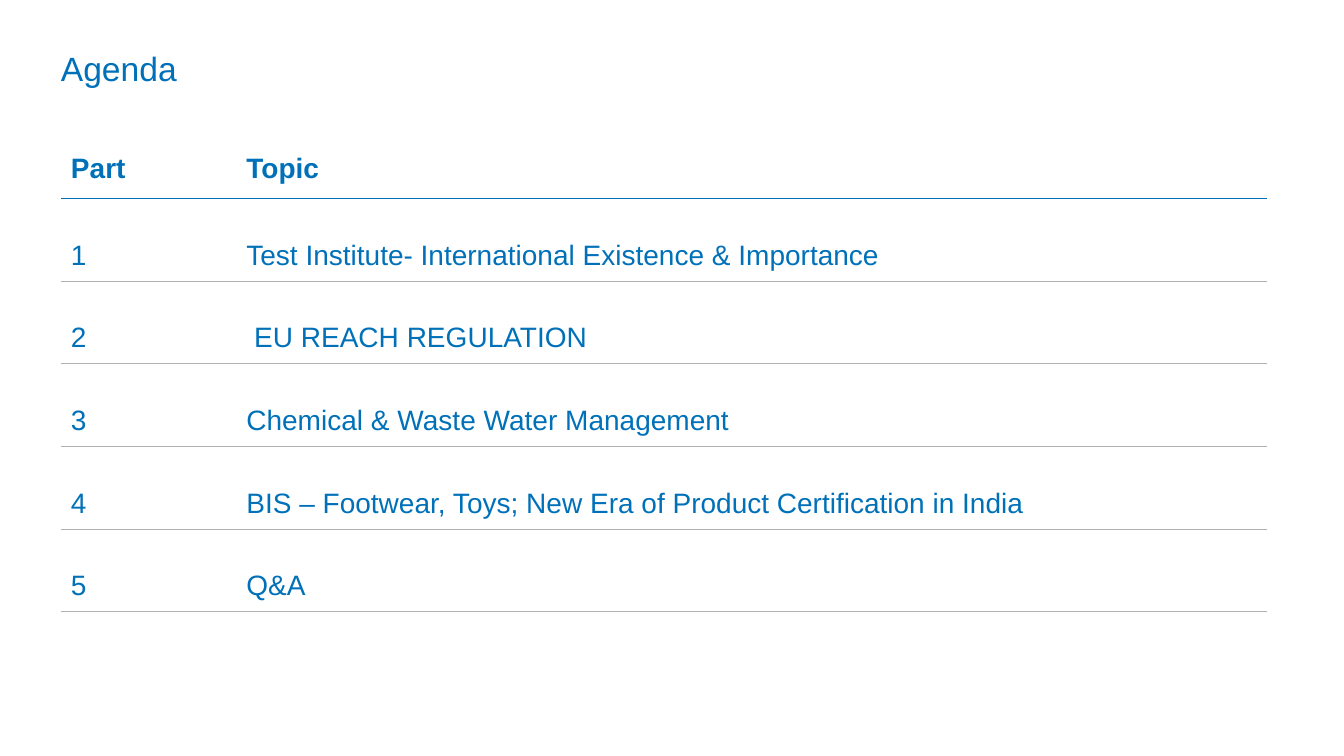
from lxml import etree
from pptx import Presentation
from pptx.dml.color import RGBColor
from pptx.enum.text import MSO_ANCHOR, PP_ALIGN
from pptx.oxml.ns import qn
from pptx.util import Pt

LEFT = PP_ALIGN.LEFT
TOP = MSO_ANCHOR.TOP
MIDDLE = MSO_ANCHOR.MIDDLE
TITLE_ONLY = 5

COLORS = {"blue": "0071B9", "gray": "B1B1B1"}
FONT = "Arial"
COLUMN_WIDTHS = (58.3, 67, 736.5)
HEADER_HEIGHT = 64.4
ROW_HEIGHT = 58.9
TOPICS = (
    "Test Institute- International Existence & Importance",
    " EU REACH REGULATION",
    "Chemical & Waste Water Management",
    "BIS – Footwear, Toys; New Era of Product Certification in India",
    "Q&A",
)


def set_values(target, values):
    """Set each named attribute of the target."""
    for name, value in values.items():
        setattr(target, name, value)


def write_text(para, text, size, bold=False):
    """Write one blue, left-aligned span into a paragraph."""
    para.alignment = LEFT
    span = para.add_run()
    span.text = text
    set_values(span.font, {"name": FONT, "size": Pt(size), "bold": bold})
    span.font.color.rgb = RGBColor.from_string(COLORS["blue"])


def add_title(page, text):
    """Place and fill the title placeholder."""
    title = page.shapes.title
    set_values(title, {"left": Pt(43.5), "top": Pt(31.7), "width": Pt(873.4), "height": Pt(33.8)})
    box = title.text_frame
    set_values(box, {
        "margin_left": 0, "margin_top": 0, "margin_right": 0, "margin_bottom": 0,
        "vertical_anchor": MIDDLE, "word_wrap": True,
    })
    write_text(box.paragraphs[0], text, 24)


def set_borders(cell, borders):
    """Draw the given (color, points) borders and clear the other sides."""
    properties = cell._tc.get_or_add_tcPr()
    for position, side in enumerate(("lnL", "lnR", "lnT", "lnB")):
        line = etree.Element(qn(f"a:{side}"))
        if side in borders:
            color, points = borders[side]
            line.set("w", str(Pt(points)))
            fill = etree.SubElement(line, qn("a:solidFill"))
            etree.SubElement(fill, qn("a:srgbClr")).set("val", COLORS[color])
        else:
            etree.SubElement(line, qn("a:noFill"))
        properties.insert(position, line)


def format_cell(cell, row):
    """Clear the fill, set margins and rule the cell for its row."""
    margin = Pt(7.2) if row else Pt(10.1)
    set_values(cell, {
        "margin_left": Pt(7.2), "margin_right": Pt(7.2),
        "margin_top": margin, "margin_bottom": margin, "vertical_anchor": TOP,
    })
    cell.fill.background()
    thick, thin = ("blue", 1.5), ("gray", 0.75)
    borders = {"lnB": thin if row else thick}
    if row:
        borders["lnT"] = thick if row == 1 else thin
    set_borders(cell, borders)


def write_cell(cell, text, bold):
    """Write double-spaced text into a table cell."""
    para = cell.text_frame.paragraphs[0]
    para.line_spacing = 2.0
    write_text(para, text, 20, bold)


def add_agenda(page):
    """Add the agenda table with a header and numbered topics."""
    rows = [("Part", "Topic")]
    rows += [(str(number), topic) for number, topic in enumerate(TOPICS, 1)]
    heights = [HEADER_HEIGHT] + [ROW_HEIGHT] * len(TOPICS)
    frame = page.shapes.add_table(
        len(rows), len(COLUMN_WIDTHS), Pt(43.5), Pt(77), Pt(sum(COLUMN_WIDTHS)), Pt(sum(heights))
    )
    table = frame.table
    set_values(table, {"first_row": False, "horz_banding": False})
    for column, width in zip(table.columns, COLUMN_WIDTHS):
        column.width = Pt(width)
    for index, (part, topic) in enumerate(rows):
        table.rows[index].height = Pt(heights[index])
        for cell in table.rows[index].cells:
            format_cell(cell, index)
        write_cell(table.cell(index, 0), part, index == 0)
        write_cell(table.cell(index, 2), topic, index == 0)
    table.cell(0, 0).merge(table.cell(0, 1))


def main():
    """Build and save the agenda slide."""
    deck = Presentation()
    set_values(deck, {"slide_width": Pt(960), "slide_height": Pt(540)})
    page = deck.slides.add_slide(deck.slide_layouts[TITLE_ONLY])
    add_title(page, "Agenda")
    add_agenda(page)
    deck.save("out.pptx")


if __name__ == "__main__":
    main()
